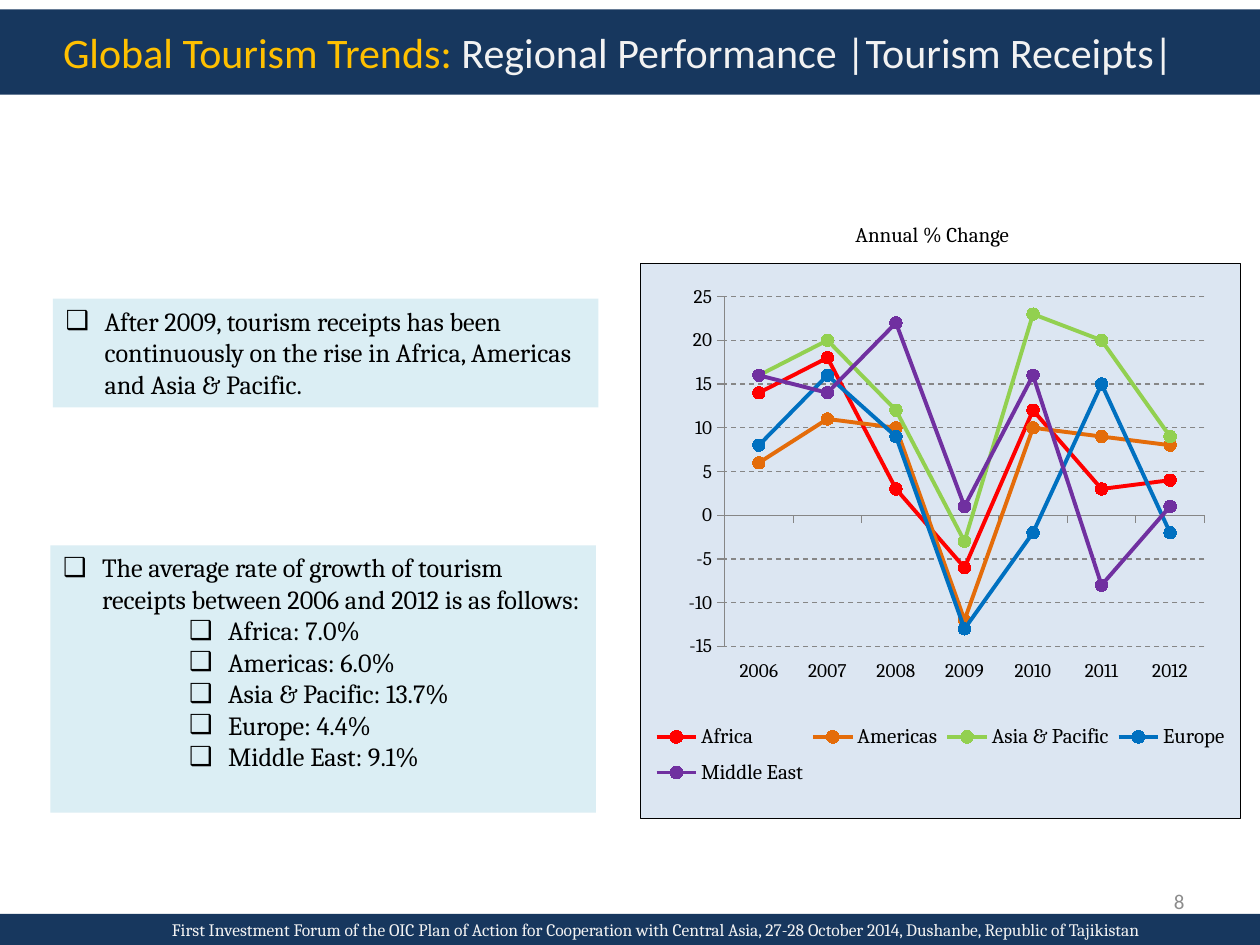
import pptx
import pptx.util
import pptx.chart.data
import pptx.dml.color
import pptx.enum.chart
import pptx.enum.dml
import pptx.enum.shapes
import pptx.enum.text
import pptx.oxml
import pptx.oxml.ns

Pt = pptx.util.Pt
Inches = pptx.util.Inches
RGB = pptx.dml.color.RGBColor.from_string
ALIGN = pptx.enum.text.PP_ALIGN
ANCHOR = pptx.enum.text.MSO_ANCHOR

THEME = {
    "navy": "17375E", "gold": "FFC000", "light": "F2F2F2", "gray": "8C8C8C",
    "ink": "000000", "paper": "FFFFFF", "list": "DBEEF4", "panel": "DCE6F2",
    "axis": "868686", "head": "Calibri", "body": "Cambria",
    "title_pt": 24, "list_pt": 15, "label_pt": 12, "axis_pt": 11, "foot_pt": 10,
}

prs = pptx.Presentation()
prs.slide_width, prs.slide_height = Inches(10), Inches(7.5)
COL, ROW = prs.slide_width / 100, prs.slide_height / 100
s = prs.slides.add_slide(prs.slide_layouts[3])


def write(sp, paragraphs, at, size, color="ink", font="body", fill=None,
          align=ALIGN.LEFT, anchor=ANCHOR.TOP, left=0.1, bullet=None):
    sp.left, sp.top, sp.width, sp.height = [
        round(n * unit) for n, unit in zip(at, (COL, ROW, COL, ROW))]
    if fill:
        sp.fill.solid()
        sp.fill.fore_color.rgb = RGB(THEME[fill])
    sp.line.fill.background()
    sp.shadow.inherit = False
    tf = sp.text_frame
    tf.word_wrap = True
    tf.auto_size = pptx.enum.text.MSO_AUTO_SIZE.NONE
    tf.vertical_anchor = anchor
    tf.margin_left = Inches(left)
    tf.margin_right = Inches(0.1)
    tf.margin_top = tf.margin_bottom = Inches(0.05)
    for i, (level, runs) in enumerate(paragraphs):
        p = tf.paragraphs[0] if i == 0 else tf.add_paragraph()
        p.alignment, p.level = align, level
        p.space_before = Pt(0)
        for text, tint in runs:
            r = p.add_run()
            r.text = text
            r.font.size = Pt(THEME[size])
            r.font.name = THEME[font]
            r.font.color.rgb = RGB(THEME[tint or color])
        if bullet:
            pPr = p._p.get_or_add_pPr()
            pPr.set("marL", str(Inches(0.31 + level / 2)))
            pPr.set("indent", str(-Inches(0.31)))
            bu = pptx.oxml.parse_xml(
                f'<a:buChar {pptx.oxml.ns.nsdecls("a")} char="{bullet}"/>')
            pPr.append(bu)


def set_layout(parent, before, x, y, w, h, target=""):
    for old in parent.findall(pptx.oxml.ns.qn("c:layout")):
        parent.remove(old)
    values = "".join(f'<c:{k} val="{v}"/>' for k, v in zip("xywh", (x, y, w, h)))
    layout = pptx.oxml.parse_xml(
        f'<c:layout {pptx.oxml.ns.nsdecls("c")}><c:manualLayout>{target}'
        f'<c:xMode val="edge"/><c:yMode val="edge"/>{values}'
        '</c:manualLayout></c:layout>')
    parent.find(pptx.oxml.ns.qn(before)).addprevious(layout)


title, first, second = s.placeholders
write(title, [(0, [("Global Tourism Trends:", "gold"),
                   (" Regional Performance |Tourism Receipts|", "light")])],
      (0, 1, 100, 9), "title_pt", font="head", fill="navy",
      anchor=ANCHOR.MIDDLE, left=0.5)

write(first, [(0, [("After 2009, tourism receipts has been continuously on the rise "
                    "in Africa, Americas and Asia & Pacific.", None)])],
      (4.2, 31.6, 43.3, 11.5), "list_pt", fill="list", bullet="❑")

growth = {"Africa": "7.0%", "Americas": "6.0%", "Asia & Pacific": "13.7%",
          "Europe": "4.4%", "Middle East": "9.1%"}
write(second, [(0, [("The average rate of growth of tourism receipts between 2006 "
                     "and 2012 is as follows:", None)])]
      + [(2, [(f"{region}: {rate}", None)]) for region, rate in growth.items()],
      (4, 57.7, 43.3, 28.3), "list_pt", fill="list", bullet="❑")

footer = s.shapes.add_shape(pptx.enum.shapes.MSO_SHAPE.RECTANGLE, 0, 0, 0, 0)
write(footer, [(0, [("First Investment Forum of the OIC Plan of Action for Cooperation "
                     "with Central Asia, 27-28 October 2014, Dushanbe, "
                     "Republic of Tajikistan", None)])],
      (0, 96.7, 100, 3.3), "foot_pt", color="light", fill="navy",
      align=ALIGN.CENTER, anchor=ANCHOR.MIDDLE, left=0.5)

number = s.shapes.add_textbox(0, 0, 0, 0)
write(number, [(0, [("8", None)])], (71.7, 92.7, 23.3, 5.3), "label_pt",
      color="gray", font="head", align=ALIGN.RIGHT, anchor=ANCHOR.MIDDLE)

data = pptx.chart.data.CategoryChartData(number_format="0")
data.categories = [str(year) for year in range(2006, 2013)]
receipts = [
    ("Africa", "FF0000", (14, 18, 3, -6, 12, 3, 4)),
    ("Americas", "E46C0A", (6, 11, 10, -12, 10, 9, 8)),
    ("Asia & Pacific", "92D050", (16, 20, 12, -3, 23, 20, 9)),
    ("Europe", "0070C0", (8, 16, 9, -13, -2, 15, -2)),
    ("Middle East", "7030A0", (16, 14, 22, 1, 16, -8, 1)),
]
for region, color, values in receipts:
    data.add_series(region, values)
chart = s.shapes.add_chart(
    pptx.enum.chart.XL_CHART_TYPE.LINE_MARKERS, round(50.8 * COL), round(27.8 * ROW),
    round(47.7 * COL), round(58.9 * ROW), data).chart
chart.has_title = False
chart.font.name = THEME["body"]
chart.font.size = Pt(9)
chart.font.color.rgb = RGB(THEME["ink"])
chart.plots[0].vary_by_categories = False

for series, (region, color, values) in zip(chart.plots[0].series, receipts):
    series.smooth = False
    series.format.line.width = Pt(2.25)
    series.format.line.color.rgb = RGB(color)
    marker = series.marker
    marker.style = pptx.enum.chart.XL_MARKER_STYLE.CIRCLE
    marker.size = 7
    marker.format.fill.solid()
    marker.format.fill.fore_color.rgb = RGB(color)
    marker.format.line.color.rgb = RGB(color)

for axis in (chart.category_axis, chart.value_axis):
    axis.tick_labels.font.size = Pt(THEME["axis_pt"])
    axis.major_tick_mark = pptx.enum.chart.XL_TICK_MARK.OUTSIDE
    axis.minor_tick_mark = pptx.enum.chart.XL_TICK_MARK.NONE
    axis.format.line.color.rgb = RGB(THEME["axis"])
chart.category_axis.tick_label_position = pptx.enum.chart.XL_TICK_LABEL_POSITION.LOW
val = chart.value_axis
val.minimum_scale, val.maximum_scale, val.major_unit = -15, 25, 5
val.tick_labels.number_format = "0"
val.tick_labels.number_format_is_linked = False
val.has_major_gridlines = True
grid = val.major_gridlines.format.line
grid.color.rgb = RGB(THEME["axis"])
grid.width = Pt(0.75)
grid.dash_style = pptx.enum.dml.MSO_LINE.DASH

chart.has_legend = True
legend = chart.legend
legend.position = pptx.enum.chart.XL_LEGEND_POSITION.BOTTOM
legend.include_in_layout = False
legend.font.size = Pt(THEME["label_pt"])
set_layout(legend._element, "c:overlay", 0.01, 0.81, 0.98, 0.15)
root = chart._chartSpace
set_layout(root.chart.plotArea, "c:lineChart", 0.14, 0.06, 0.8, 0.63,
           '<c:layoutTarget val="inner"/>')
root.chart.addnext(pptx.oxml.parse_xml(
    f'<c:spPr {pptx.oxml.ns.nsdecls("c", "a")}>'
    f'<a:solidFill><a:srgbClr val="{THEME["panel"]}"/></a:solidFill>'
    f'<a:ln w="{Pt(0.75)}"><a:solidFill><a:srgbClr val="{THEME["ink"]}"/></a:solidFill>'
    '</a:ln></c:spPr>'))

caption = s.shapes.add_shape(pptx.enum.shapes.MSO_SHAPE.RECTANGLE, 0, 0, 0, 0)
write(caption, [(0, [("Annual % Change", None)])], (58.3, 22.8, 31.4, 2.7),
      "label_pt", fill="paper", align=ALIGN.CENTER)

prs.save("out.pptx")
